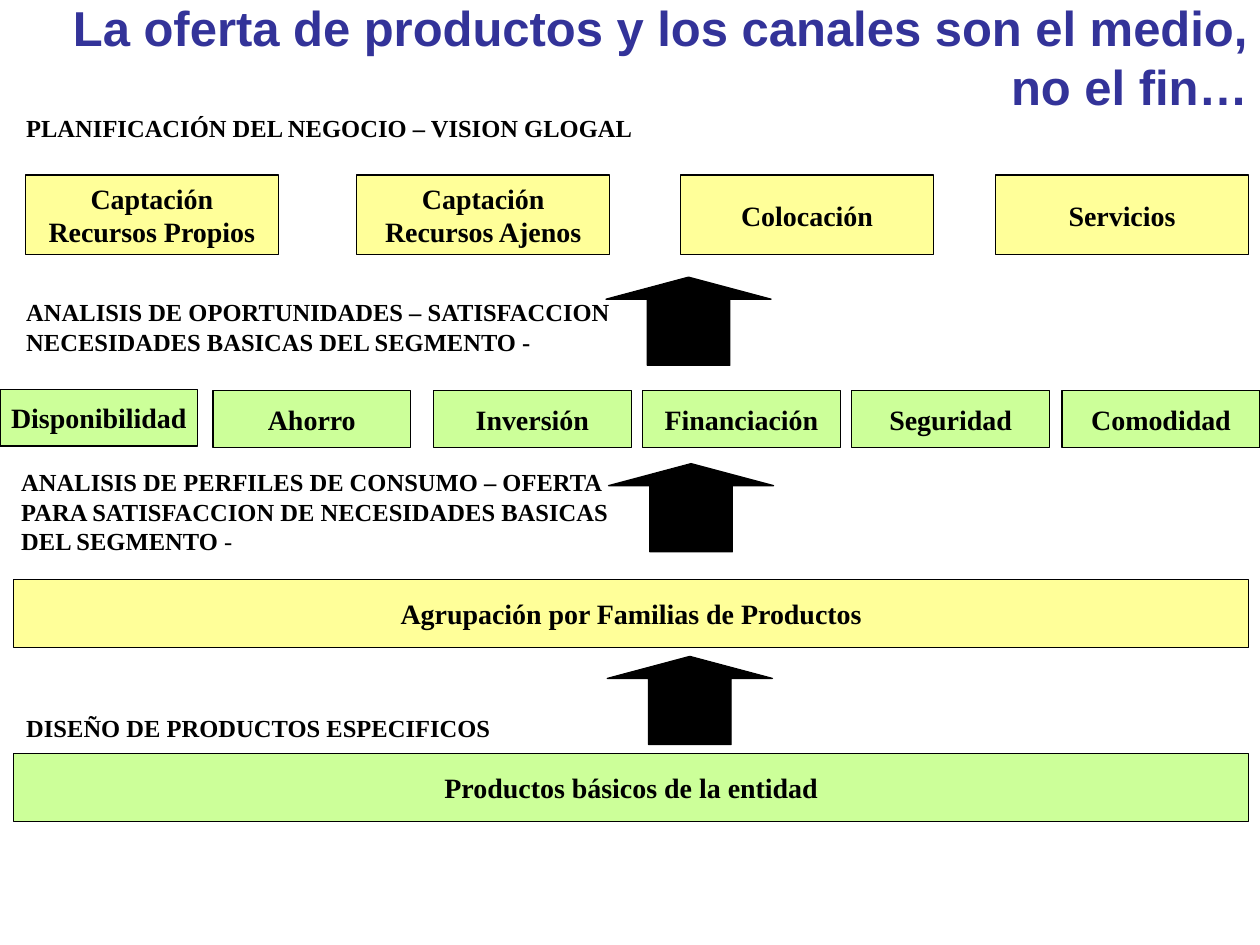
from pptx import Presentation
from pptx.dml.color import RGBColor
from pptx.enum import shapes, text
from pptx.util import Inches, Pt

BLACK = RGBColor(0x00, 0x00, 0x00)
GREEN = RGBColor(0xCC, 0xFF, 0x99)
YELLOW = RGBColor(0xFF, 0xFF, 0x99)
INDIGO = RGBColor(0x33, 0x33, 0x99)
SERIF = "Times New Roman"

TITLE = "La oferta de productos y los canales son el medio, no el fin…"
BOX_ROWS = [
    (5.98, 9.8, 0.54, GREEN, [(0.11, "Productos básicos de la entidad")]),
    (4.6, 9.8, 0.54, YELLOW, [(0.11, "Agrupación por Familias de Productos")]),
    (3.09, 1.57, 0.45, GREEN, [(0, "Disponibilidad")]),
    (3.1, 1.57, 0.45, GREEN, [
        (1.69, "Ahorro"),
        (3.44, "Inversión"),
        (5.1, "Financiación"),
        (6.76, "Seguridad"),
        (8.43, "Comodidad"),
    ]),
    (1.39, 2.01, 0.63, YELLOW, [
        (0.2, "Captación\nRecursos Propios"),
        (2.83, "Captación\nRecursos Ajenos"),
        (5.4, "Colocación"),
        (7.9, "Servicios"),
    ]),
]
ARROWS = [(4.82, 5.21), (4.81, 2.2), (4.83, 3.68)]
STAGES = [
    (0.11, 0.85, 6.47, 0.33, "PLANIFICACIÓN DEL NEGOCIO – VISION GLOGAL", ""),
    (0.11, 2.31, 5.42, 0.57,
     "ANALISIS DE OPORTUNIDADES – SATISFACCION NECESIDADES BASICAS DEL SEGMENTO -", ""),
    (0.07, 3.66, 5.05, 0.8,
     "ANALISIS DE PERFILES DE CONSUMO – OFERTA PARA SATISFACCION DE NECESIDADES BASICAS DEL SEGMENTO",
     " -"),
    (0.11, 5.61, 5.42, 0.33, "DISEÑO DE PRODUCTOS ESPECIFICOS", ""),
]


def style_text(frame, size, color, alignment, font_name=SERIF):
    for paragraph in frame.paragraphs:
        paragraph.alignment = alignment
        for run in paragraph.runs:
            run.font.name = font_name
            run.font.size = Pt(size)
            run.font.bold = True
            run.font.color.rgb = color


def add_block(slide, kind, left, top, width, height, fill):
    shape = slide.shapes.add_shape(
        kind, Inches(left), Inches(top), Inches(width), Inches(height))
    shape.shadow.inherit = False
    shape.fill.solid()
    shape.fill.fore_color.rgb = fill
    shape.line.color.rgb = BLACK
    shape.line.width = Pt(0.75)
    return shape


def add_label(slide, left, top, width, height, words):
    box = slide.shapes.add_textbox(
        Inches(left), Inches(top), Inches(width), Inches(height))
    box.text_frame.word_wrap = True
    box.text_frame.text = words
    return box.text_frame


def main():
    presentation = Presentation()
    presentation.slide_width = Inches(10)
    presentation.slide_height = Inches(7.5)
    slide = presentation.slides.add_slide(presentation.slide_layouts[6])

    for top, width, height, fill, boxes in BOX_ROWS:
        for left, words in boxes:
            shape = add_block(slide, shapes.MSO_SHAPE.RECTANGLE,
                              left, top, width, height, fill)
            frame = shape.text_frame
            frame.word_wrap = False
            frame.vertical_anchor = text.MSO_ANCHOR.MIDDLE
            frame.text = words
            style_text(frame, 16, BLACK, text.PP_ALIGN.CENTER)

    for left, top in ARROWS:
        arrow = add_block(slide, shapes.MSO_SHAPE.UP_ARROW, left, top, 1.31, 0.7, BLACK)
        arrow.adjustments[0] = 0.5
        arrow.adjustments[1] = 0.25

    for left, top, width, height, words, ending in STAGES:
        frame = add_label(slide, left, top, width, height, words)
        frame.auto_size = text.MSO_AUTO_SIZE.SHAPE_TO_FIT_TEXT
        if ending:
            frame.paragraphs[0].add_run().text = ending
        style_text(frame, 14, BLACK, text.PP_ALIGN.LEFT)
        if ending:
            frame.paragraphs[0].runs[-1].font.bold = False

    title = add_label(slide, 0, 0.16, 10, 0.58, TITLE)
    title.vertical_anchor = text.MSO_ANCHOR.MIDDLE
    style_text(title, 28, INDIGO, text.PP_ALIGN.RIGHT, "Arial")

    presentation.save("out.pptx")


if __name__ == "__main__":
    main()
